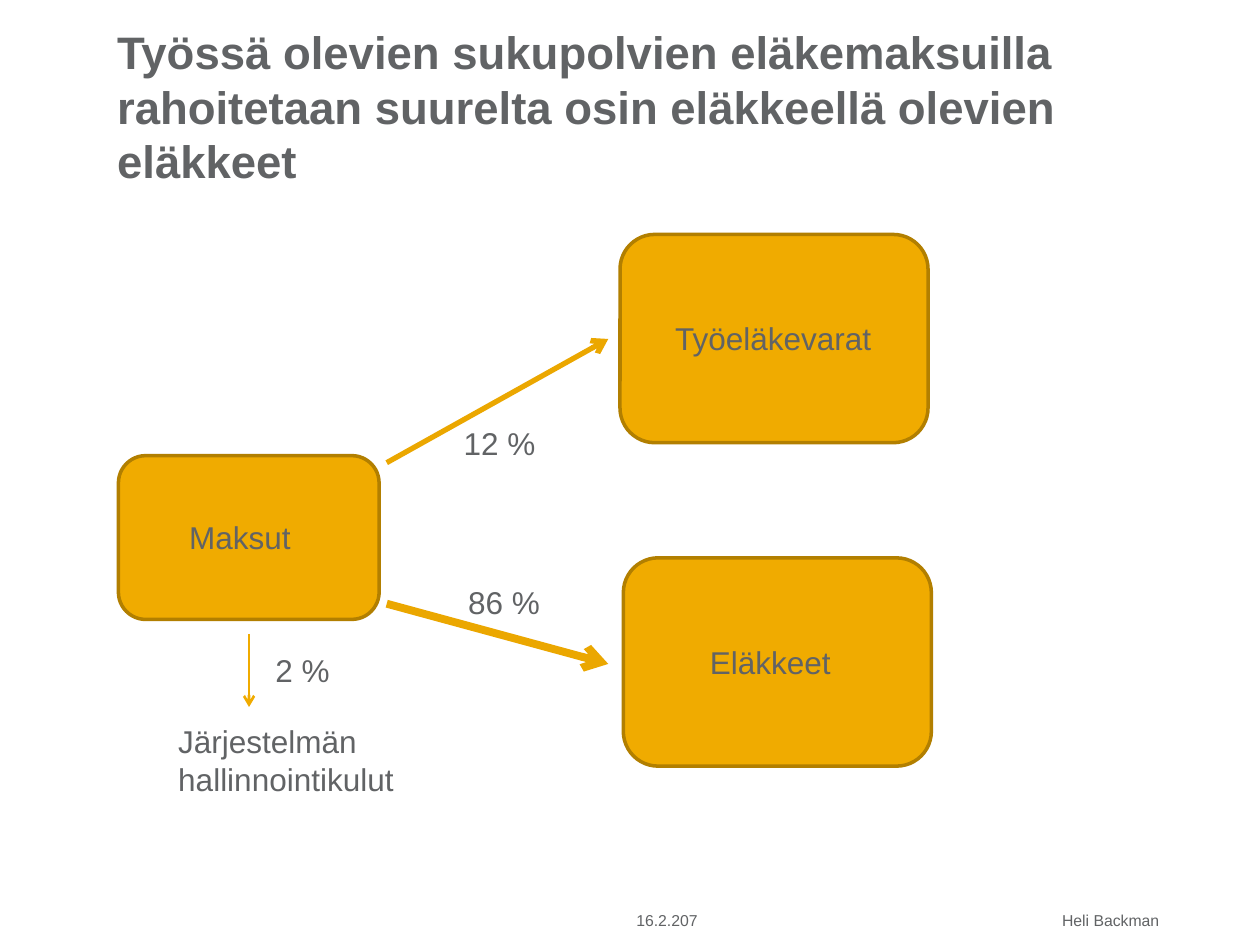
from lxml import etree
from pptx import Presentation
from pptx.dml.color import RGBColor
from pptx.enum.shapes import MSO_CONNECTOR, MSO_SHAPE
from pptx.enum.text import MSO_ANCHOR, MSO_AUTO_SIZE, PP_ALIGN
from pptx.oxml.ns import qn
from pptx.util import Pt

GREY, AMBER, DARK_AMBER, ARROW_AMBER = "616365", "F0AB00", "B27F00", "EBA700"


def paint(color_format, hex_color):
    color_format.rgb = RGBColor.from_string(hex_color)


def add_text(slide, text, left, top, width, height, size=18, bold=False, align=PP_ALIGN.LEFT):
    box = slide.shapes.add_textbox(Pt(left), Pt(top), Pt(width), Pt(height))
    frame = box.text_frame
    frame.word_wrap = True
    frame.text = text
    paragraph = frame.paragraphs[0]
    paragraph.alignment = align
    paragraph.font.name = "Arial"
    paragraph.font.size = Pt(size)
    paragraph.font.bold = bold
    paint(paragraph.font.color, GREY)
    return frame


def add_title(slide, text):
    frame = add_text(slide, text, 59.8, 21.6, 601.2, 89.3, size=26, bold=True)
    frame.vertical_anchor = MSO_ANCHOR.BOTTOM


def add_label(slide, text, left, top, width, height=29):
    frame = add_text(slide, text, left, top, width, height)
    frame.auto_size = MSO_AUTO_SIZE.SHAPE_TO_FIT_TEXT


def add_footer(slide, text, left, width, align=PP_ALIGN.LEFT):
    frame = add_text(slide, text, left, 514, width, 17.3, size=9, align=align)
    frame.margin_left = frame.margin_right = frame.margin_top = frame.margin_bottom = 0
    frame.vertical_anchor = MSO_ANCHOR.BOTTOM


def add_box(slide, left, top, width, height):
    box = slide.shapes.add_shape(
        MSO_SHAPE.ROUNDED_RECTANGLE, Pt(left), Pt(top), Pt(width), Pt(height))
    box.shadow.inherit = False
    box.fill.solid()
    paint(box.fill.fore_color, AMBER)
    paint(box.line.color, DARK_AMBER)
    box.line.width = Pt(2)


def add_arrow(slide, start, end, weight, hex_color):
    arrow = slide.shapes.add_connector(
        MSO_CONNECTOR.STRAIGHT, *(Pt(value) for value in (*start, *end)))
    paint(arrow.line.color, hex_color)
    arrow.line.width = Pt(weight)
    properties = arrow.element.spPr
    etree.SubElement(properties.find(qn("a:ln")), qn("a:tailEnd"), type="arrow")
    etree.SubElement(properties, qn("a:effectLst"))


def main():
    """Build the slide on how pension contributions are used."""
    presentation = Presentation()
    presentation.slide_width, presentation.slide_height = Pt(720), Pt(540)
    slide = presentation.slides.add_slide(presentation.slide_layouts[6])

    add_title(slide, "Työssä olevien sukupolvien eläkemaksuilla rahoitetaan "
                     "suurelta osin eläkkeellä olevien eläkkeet")

    add_box(slide, 67.7, 260.4, 149, 93.6)
    for left, top in ((354.3, 134), (356.2, 318.8)):
        add_box(slide, left, top, 176, 119)

    add_arrow(slide, (221, 345), (347.6, 379.4), 4.5, ARROW_AMBER)
    add_arrow(slide, (221, 264.4), (347.6, 193.7), 3, ARROW_AMBER)
    add_arrow(slide, (142.3, 362.2), (142.3, 404), 1.5, AMBER)

    add_label(slide, "Maksut", 101, 292.6, 82)
    add_label(slide, "Työeläkevarat", 378.7, 179, 130.3)
    add_label(slide, "Eläkkeet", 398.6, 363.9, 90.7)
    add_label(slide, "Järjestelmän hallinnointikulut", 94.8, 409, 225.4, 51)
    add_label(slide, "2 %", 150.2, 368.6, 59)
    add_label(slide, "12 %", 257.8, 238.6, 62.6)
    add_label(slide, "86 %", 260.4, 329.8, 82)

    add_footer(slide, "16.2.207", 363.6, 70.6)
    add_footer(slide, "Heli Backman", 535.7, 126.7, PP_ALIGN.RIGHT)
    presentation.save("out.pptx")


if __name__ == "__main__":
    main()
